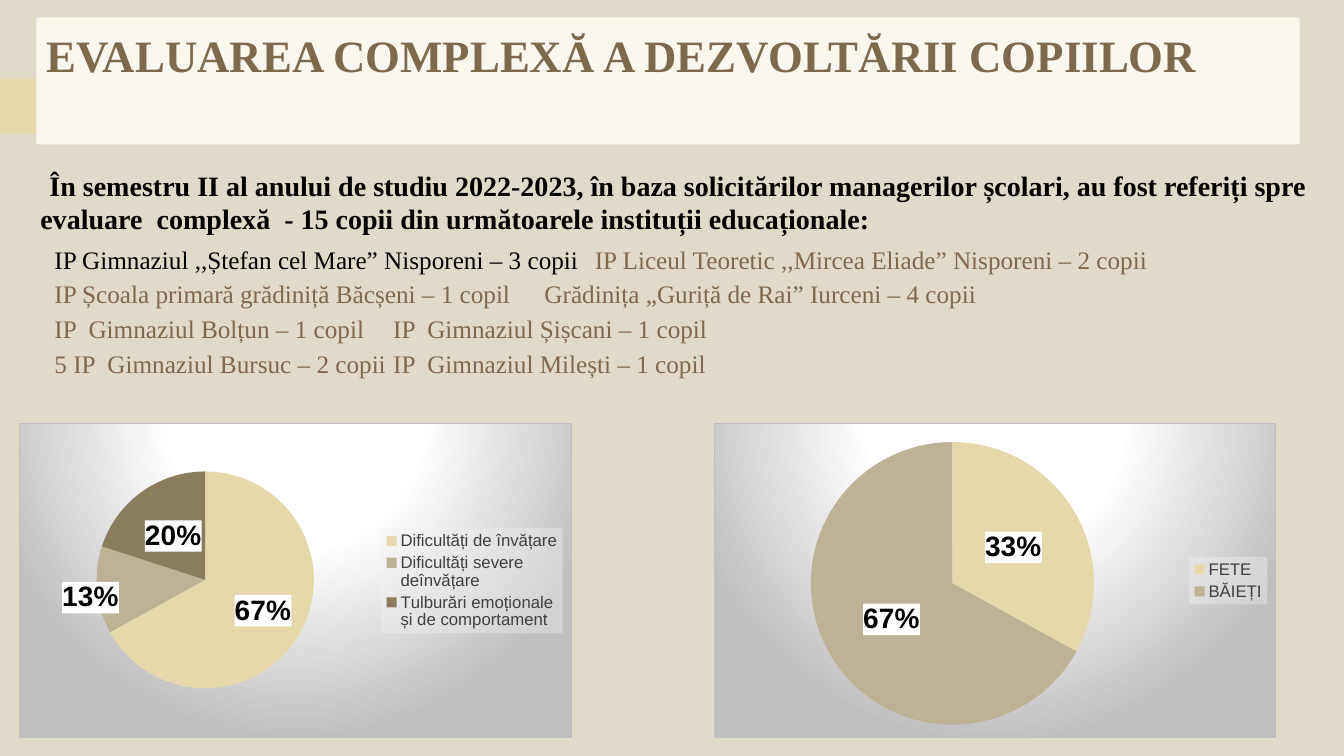
import copy
import dataclasses
import typing

import lxml.etree
import pptx
import pptx.chart.data
import pptx.dml.color
import pptx.enum.chart
import pptx.enum.dml
import pptx.enum.shapes
import pptx.enum.text
import pptx.oxml
import pptx.oxml.ns
import pptx.util

RGB = pptx.dml.color.RGBColor
BACKGROUND = RGB(0xE0, 0xDA, 0xC8)
CREAM = RGB(0xFA, 0xF7, 0xEE)
SAND = RGB(0xE7, 0xD8, 0xAC)
KHAKI = RGB(0xBE, 0xB2, 0x96)
UMBER = RGB(0x8A, 0x7C, 0x5C)
BROWN = RGB(0x7F, 0x69, 0x4C)
BLACK = RGB(0, 0, 0)
DARK_GREY = RGB(0x40, 0x40, 0x40)

SERIF, SANS = "Times New Roman", "Arial"
WIDTH, HEIGHT = pptx.util.Inches(13.33), pptx.util.Inches(7.5)
Box = tuple[float, float, float, float]  # left, top, width, height in percent
qn = pptx.oxml.ns.qn
NS = pptx.oxml.ns.nsdecls("a", "c")

CHART_FILL = f"""<c:spPr {NS}><a:gradFill><a:gsLst>
<a:gs pos="0"><a:srgbClr val="FFFFFF"/></a:gs><a:gs pos="39000"><a:srgbClr val="FFFFFF"/></a:gs>
<a:gs pos="100000"><a:srgbClr val="BFBFBF"/></a:gs></a:gsLst>
<a:path path="circle"><a:fillToRect l="50000" t="-80000" r="50000" b="180000"/></a:path></a:gradFill>
<a:ln w="9525"><a:solidFill><a:srgbClr val="BFBFBF"/></a:solidFill></a:ln></c:spPr>"""
LEGEND_FILL = f"""<c:spPr {NS}><a:solidFill><a:srgbClr val="F2F2F2">
<a:alpha val="39000"/></a:srgbClr></a:solidFill></c:spPr>"""
LABEL_FILL = f'<c:spPr {NS}><a:solidFill><a:srgbClr val="FFFFFF"/></a:solidFill></c:spPr>'


@dataclasses.dataclass
class Pie:
    box: Box
    plot: Box
    slices: dict[str, int]
    label_shifts: dict[int, tuple[float, float]] = dataclasses.field(default_factory=dict)


@dataclasses.dataclass
class SchoolRow:
    left: str
    right: str
    left_color: RGB = BROWN


PIES = [
    Pie((1.43, 56, 41.1, 41.6), (13.9, 15.2, 39.5, 69.2),
        {"Dificultăți de învățare": 67, "Dificultăți severe deînvățare": 13,
         "Tulburări emoționale și de comportament": 20},
        {0: (0.02, 0.01), 1: (-0.11, 0.04)}),
    Pie((53.1, 56, 41.85, 41.6), (16, 5.8, 52.9, 90.2), {"FETE": 33, "BĂIEȚI": 67}),
]
SCHOOLS = [
    SchoolRow("IP Gimnaziul ,,Ștefan cel Mare” Nisporeni – 3 copii",
              "IP Liceul Teoretic ,,Mircea Eliade” Nisporeni – 2 copii", BLACK),
    SchoolRow("IP Școala primară grădiniță Băcșeni – 1 copil",
              "Grădinița „Guriță de Rai” Iurceni – 4 copii"),
    SchoolRow("IP  Gimnaziul Bolțun – 1 copil", "IP  Gimnaziul Șișcani – 1 copil"),
    SchoolRow("5 IP  Gimnaziul Bursuc – 2 copii", "IP  Gimnaziul Milești – 1 copil"),
]
INTRO = ("În semestru II al anului de studiu 2022-2023, în baza solicitărilor managerilor școlari, "
         "au fost referiți spre evaluare  complexă  - 15 copii din următoarele instituții educaționale:")


def place(box: Box) -> tuple[int, int, int, int]:
    return tuple(int(share / 100 * side) for share, side in zip(box, (WIDTH, HEIGHT) * 2))


def assign(target: typing.Any, values: dict[str, typing.Any]) -> None:
    for name, value in values.items():
        setattr(target, name, value)


def format_font(font: typing.Any, size: float, color: RGB, name: str, bold: bool = False) -> None:
    assign(font, {"size": pptx.util.Pt(size), "name": name, "bold": bold})
    font.color.rgb = color


def add_run(p: typing.Any, text: str, size: float, color: RGB, bold: bool = False) -> None:
    r = p.add_run()
    r.text = text
    format_font(r.font, size, color, SERIF, bold)


def prepare(sp: typing.Any, box: Box, left_inset: float) -> typing.Any:
    assign(sp, dict(zip(("left", "top", "width", "height"), place(box))))
    inset = pptx.util.Inches(0.1)
    assign(sp.text_frame, {
        "margin_left": pptx.util.Inches(left_inset), "margin_right": inset,
        "margin_top": inset, "margin_bottom": inset, "word_wrap": True,
        "auto_size": pptx.enum.text.MSO_AUTO_SIZE.NONE,
        "vertical_anchor": pptx.enum.text.MSO_ANCHOR.TOP})
    return sp.text_frame


def format_paragraph(p: typing.Any, indent: float, before: float, spacing: float,
                     tab: float | None = None) -> None:
    pPr = p._p.get_or_add_pPr()
    pPr.set("marL", "0")
    pPr.set("indent", str(pptx.util.Inches(indent)))
    lxml.etree.SubElement(pPr, qn("a:buNone"))
    if tab is not None:
        tabs = lxml.etree.SubElement(pPr, qn("a:tabLst"))
        lxml.etree.SubElement(tabs, qn("a:tab"), pos=str(pptx.util.Inches(tab)), algn="l")
    assign(p, {"alignment": pptx.enum.text.PP_ALIGN.LEFT, "line_spacing": spacing,
               "space_before": pptx.util.Pt(before), "space_after": pptx.util.Pt(0)})


def layout_xml(values: Box, inner: bool = False) -> typing.Any:
    target = '<c:layoutTarget val="inner"/><c:xMode val="edge"/><c:yMode val="edge"/>' if inner else ""
    sizes = "".join(f'<c:{key} val="{v}"/>' for key, v in zip("xywh", values))
    return pptx.oxml.parse_xml(
        f"<c:layout {NS}><c:manualLayout>{target}{sizes}</c:manualLayout></c:layout>")


def add_pie(slide: typing.Any, pie: Pie) -> None:
    data = pptx.chart.data.CategoryChartData()
    data.categories = list(pie.slices)
    data.add_series("Series 1", list(pie.slices.values()))
    chart = slide.shapes.add_chart(pptx.enum.chart.XL_CHART_TYPE.PIE, *place(pie.box), data).chart
    assign(chart, {"has_title": False, "has_legend": True})
    format_font(chart.font, 10, BLACK, SANS)
    chart._chartSpace.find(qn("c:txPr")).addprevious(pptx.oxml.parse_xml(CHART_FILL))

    # Legend
    assign(chart.legend, {"position": pptx.enum.chart.XL_LEGEND_POSITION.RIGHT,
                          "include_in_layout": False})
    format_font(chart.legend.font, 12, DARK_GREY, SANS)
    chart.legend._element.find(qn("c:txPr")).addprevious(pptx.oxml.parse_xml(LEGEND_FILL))

    # Plot area and slices
    area = chart._chartSpace.chart.plotArea
    for old in area.findall(qn("c:layout")):
        area.remove(old)
    area.insert(0, layout_xml(tuple(round(v / 100, 3) for v in pie.plot), True))
    plot = chart.plots[0]
    plot.vary_by_categories = True
    series = plot.series[0]
    for i, color in zip(range(len(pie.slices)), (SAND, KHAKI, UMBER)):
        point = series.points[i].format
        point.fill.solid()
        point.fill.fore_color.rgb = color
        point.line.fill.background()

    # Percent labels
    labels = series.data_labels
    assign(labels, {"show_value": False, "show_percentage": True, "number_format": "0%",
                    "number_format_is_linked": False,
                    "position": pptx.enum.chart.XL_LABEL_POSITION.CENTER})
    format_font(labels.font, 20, BLACK, SANS, True)
    dLbls = labels._element
    dLbls.find(qn("c:txPr")).addprevious(pptx.oxml.parse_xml(LABEL_FILL))
    common = [copy.deepcopy(e) for e in dLbls if e.tag != qn("c:showLeaderLines")]
    for position, (i, shift) in enumerate(pie.label_shifts.items()):
        dLbl = pptx.oxml.parse_xml(f'<c:dLbl {NS}><c:idx val="{i}"/></c:dLbl>')
        dLbl.append(layout_xml(shift))
        dLbl.extend(copy.deepcopy(common))
        dLbls.insert(position, dLbl)


def main() -> None:
    prs = pptx.Presentation()
    assign(prs, {"slide_width": WIDTH, "slide_height": HEIGHT})
    slide = prs.slides.add_slide(prs.slide_layouts[1])
    slide.background.fill.solid()
    slide.background.fill.fore_color.rgb = BACKGROUND

    # Arrow tab behind the title
    sp = slide.shapes.add_shape(pptx.enum.shapes.MSO_SHAPE.PENTAGON, *place((0, 10.4, 13.05, 7.33)))
    sp.shadow.inherit = False
    sp.fill.solid()
    sp.fill.fore_color.rgb = SAND
    sp.line.fill.background()
    slide.shapes._spTree.insert(2, sp._element)

    # Title
    title = slide.shapes.title
    tf = prepare(title, (2.7, 2.3, 94, 16.8), 0.1)
    title.fill.solid()
    title.fill.fore_color.rgb = CREAM
    p = tf.paragraphs[0]
    p.alignment = pptx.enum.text.PP_ALIGN.LEFT
    add_run(p, "EVALUAREA COMPLEXĂ A DEZVOLTĂRII COPIILOR", 32, BROWN, True)

    # Introduction and two columns of schools
    tf = prepare(slide.placeholders[1], (0, 20.93, 98.6, 71.2), 0.4)
    p = tf.paragraphs[0]
    format_paragraph(p, 0.09, 0, 1)
    add_run(p, INTRO, 20, BLACK, True)
    for i, row in enumerate(SCHOOLS):
        p = tf.add_paragraph()
        format_paragraph(p, 0.14, 0 if i else 6, 1.15 if i else 1, 7.08)
        add_run(p, row.left + "\t", 18, row.left_color)
        add_run(p, row.right, 18, BROWN)

    # Charts
    for pie in PIES:
        add_pie(slide, pie)
    prs.save("out.pptx")


if __name__ == "__main__":
    main()
